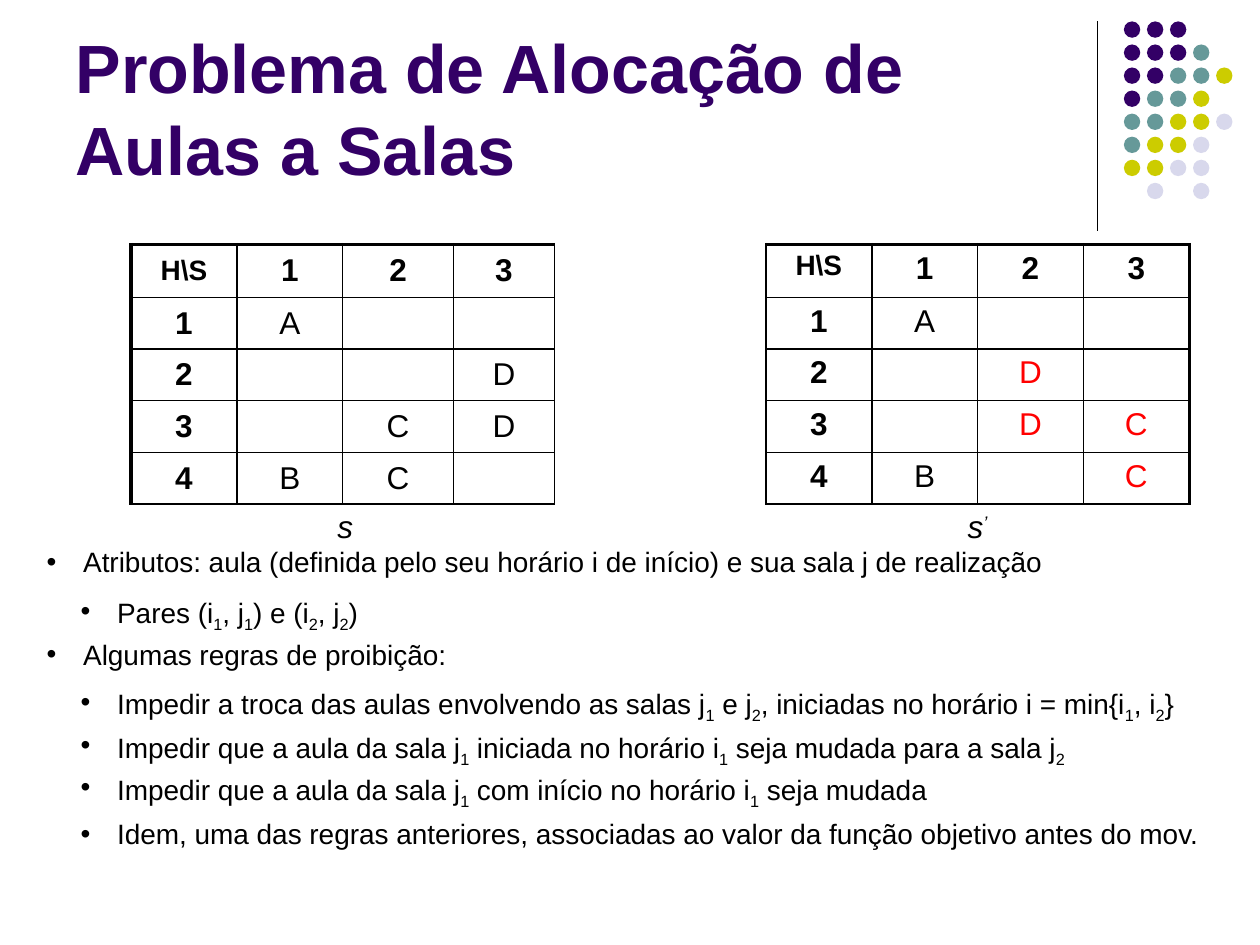
from lxml.etree import SubElement
from pptx import Presentation
from pptx.dml.color import RGBColor
from pptx.enum.shapes import MSO_CONNECTOR, MSO_SHAPE
from pptx.enum.text import MSO_ANCHOR, MSO_AUTO_SIZE, PP_ALIGN
from pptx.oxml.ns import qn
from pptx.util import Inches, Pt

COLORS = {"black": "000000", "red": "FF0000", "purple": "330066",
          "teal": "669999", "olive": "CCCC00", "lilac": "D8D8EC"}

DOT_COLORS = {"P": "purple", "T": "teal", "O": "olive", "L": "lilac"}
DOT_ROWS = ["PPP", "PPPT", "PPTTO", "PTTO", "TTOOL", "TOOL", "OOLL", " L L"]

# Each row: the schedule s, two gap columns, the schedule s'.
HEADER = ["H\\S", "1", "2", "3"]
SCHEDULE = [["1", "A", "", ""], ["2", "", "", "D"],
            ["3", "", "C", "D"], ["4", "B", "C", ""]]
NEIGHBOUR = [["1", "A", "", ""], ["2", "", "D", ""],
             ["3", "", "D", "C"], ["4", "B", "", "C"]]
GAP_COLUMNS = (4, 5)
COLUMN_WIDTHS = [0.84, 0.84, 0.88, 0.8] + [0.84] * 6
ROW_HEIGHTS = [0.42] + [0.41] * 5
CAPTION_ROW = 5

# Level, line spacing, space before in points, text ("_" lowers the next character).
RULES = [
    (0, 0.9, 0, "Atributos: aula (definida pelo seu horário i de início) e sua sala j de realização"),
    (1, 0.9, 10, "Pares (i_1, j_1) e (i_2, j_2)"),
    (0, 0.7, 9.5, "Algumas regras de proibição:"),
    (1, 0.9, 9.5, "Impedir a troca das aulas envolvendo as salas j_1 e j_2, "
                  "iniciadas no horário i = min{i_1, i_2}"),
    (1, 0.7, 9, "Impedir que a aula da sala j_1 iniciada no horário i_1 seja mudada para a sala j_2"),
    (1, 0.7, 9, "Impedir que a aula da sala j_1 com início no horário i_1 seja mudada"),
    (1, 0.9, 8, "Idem, uma das regras anteriores, associadas ao valor da função objetivo antes do mov."),
]


def rgb(name):
    return RGBColor.from_string(COLORS[name])


def add_run(paragraph, text, baseline=0):
    run = paragraph.add_run()
    run.text = text
    if baseline:
        run._r.get_or_add_rPr().set("baseline", str(baseline * 1000))


def edge_widths(row, column):
    """Border widths in points of one cell, by side; 0 means no line."""
    in_gap = column in GAP_COLUMNS
    in_grid = row < CAPTION_ROW
    upright = {0: 2.25, 5: 0, 10: 2.25}
    return {
        "a:lnL": upright.get(column, 1) if in_grid else 0,
        "a:lnR": upright.get(column + 1, 1) if in_grid else 0,
        "a:lnT": 0 if in_gap else 2.25 if row == 0 else 1,
        "a:lnB": 1 if in_grid and not in_gap else 0,
    }


class SlideBuilder:
    font_name = "Arial"

    def __init__(self, slide):
        self.slide = slide

    def style(self, font, size, color="black", bold=False, italic=False):
        font.name, font.size = self.font_name, Pt(size)
        font.bold, font.italic = bold, italic
        font.color.rgb = rgb(color)

    def place(self, shape, left, top, width, height):
        shape.left, shape.top = Inches(left), Inches(top)
        shape.width, shape.height = Inches(width), Inches(height)
        shape.text_frame.auto_size = MSO_AUTO_SIZE.NONE
        shape.text_frame.word_wrap = True

    def title(self, text):
        heading = self.slide.shapes.title
        self.place(heading, 0.5, 0.13, 8.25, 1.42)
        heading.text_frame.vertical_anchor = MSO_ANCHOR.BOTTOM
        paragraph = heading.text_frame.paragraphs[0]
        paragraph.alignment = PP_ALIGN.LEFT
        add_run(paragraph, text)
        self.style(paragraph.font, 39, "purple", bold=True)

    def rule_list(self, rules):
        body = self.slide.placeholders[1]
        self.place(body, 0.27, 4.3, 9.53, 2.41)
        frame = body.text_frame
        for index, (level, line_spacing, space_before, text) in enumerate(rules):
            paragraph = frame.add_paragraph() if index else frame.paragraphs[0]
            paragraph.level = level
            paragraph.line_spacing = line_spacing
            paragraph.space_before = Pt(space_before)
            properties = paragraph._p.get_or_add_pPr()
            properties.set("marL", str(Inches(0.29 + 0.27 * level)))
            properties.set("indent", str(Inches(-0.29)))
            SubElement(properties, qn("a:buChar"), char="•")
            self.style(paragraph.font, 16)
            start, *lowered = text.split("_")
            add_run(paragraph, start)
            for part in lowered:
                add_run(paragraph, part[0], -25)
                if part[1:]:
                    add_run(paragraph, part[1:])

    def border(self, cell, widths):
        properties = cell._tc.get_or_add_tcPr()
        for side, width in widths.items():
            line = SubElement(properties, qn(side), w=str(Pt(width)))
            if width:
                fill = SubElement(line, qn("a:solidFill"))
                SubElement(fill, qn("a:srgbClr"), val=COLORS["black"])
            else:
                SubElement(line, qn("a:noFill"))

    def cell_text(self, cell, text, size=18, **look):
        paragraph = cell.text_frame.paragraphs[0]
        paragraph.alignment = PP_ALIGN.CENTER
        self.style(paragraph.font, size, **look)
        if text:
            add_run(paragraph, text)
        return paragraph

    def schedules(self):
        table = self.slide.shapes.add_table(
            len(ROW_HEIGHTS), len(COLUMN_WIDTHS), Inches(1.04), Inches(1.94),
            Inches(sum(COLUMN_WIDTHS)), Inches(sum(ROW_HEIGHTS))).table
        table.first_row = table.horz_banding = False
        for column, width in zip(table.columns, COLUMN_WIDTHS):
            column.width = Inches(width)
        for row, height in zip(table.rows, ROW_HEIGHTS):
            row.height = Inches(height)

        blank = [""] * len(COLUMN_WIDTHS)
        grid = [left + ["", ""] + right for left, right in
                zip([HEADER] + SCHEDULE, [HEADER] + NEIGHBOUR)] + [blank]
        for r, texts in enumerate(grid):
            for c, text in enumerate(texts):
                cell = table.cell(r, c)
                self.border(cell, edge_widths(r, c))
                cell.fill.background()
                if r == CAPTION_ROW:
                    continue
                if c < GAP_COLUMNS[0]:
                    cell.vertical_anchor = MSO_ANCHOR.MIDDLE
                moved = c > GAP_COLUMNS[1] and text in ("C", "D")
                self.cell_text(cell, text, 16 if text == HEADER[0] else 18,
                               color="red" if moved else "black",
                               bold=r == 0 or c in (0, 6))
        for first, prime in ((1, ""), (7, "’")):
            caption = table.cell(CAPTION_ROW, first)
            caption.merge(table.cell(CAPTION_ROW, first + 1))
            paragraph = self.cell_text(caption, "s", italic=True)
            if prime:
                add_run(paragraph, prime, 30)

    def divider(self, x, top, bottom):
        line = self.slide.shapes.add_connector(
            MSO_CONNECTOR.STRAIGHT, Inches(x), Inches(top), Inches(x), Inches(bottom))
        line.line.color.rgb = rgb("black")
        line.line.width = Pt(0.75)
        SubElement(line._element.spPr, qn("a:effectLst"))

    def dots(self, left, top, pitch, size):
        group = self.slide.shapes.add_group_shape()
        for r, row in enumerate(DOT_ROWS):
            for c, key in enumerate(row):
                if key == " ":
                    continue
                dot = group.shapes.add_shape(
                    MSO_SHAPE.OVAL, Inches(left + c * pitch), Inches(top + r * pitch),
                    Inches(size), Inches(size))
                dot.shadow.inherit = False
                dot.fill.solid()
                dot.fill.fore_color.rgb = rgb(DOT_COLORS[key])
                dot.line.fill.background()


def main():
    deck = Presentation()
    deck.slide_width, deck.slide_height = Inches(10), Inches(7.5)
    builder = SlideBuilder(deck.slides.add_slide(deck.slide_layouts[1]))
    builder.divider(8.71, 0.17, 1.83)
    builder.dots(8.92, 0.17, 0.183, 0.13)
    builder.title("Problema de Alocação de Aulas a Salas")
    builder.schedules()
    builder.rule_list(RULES)
    deck.save("out.pptx")


if __name__ == "__main__":
    main()
